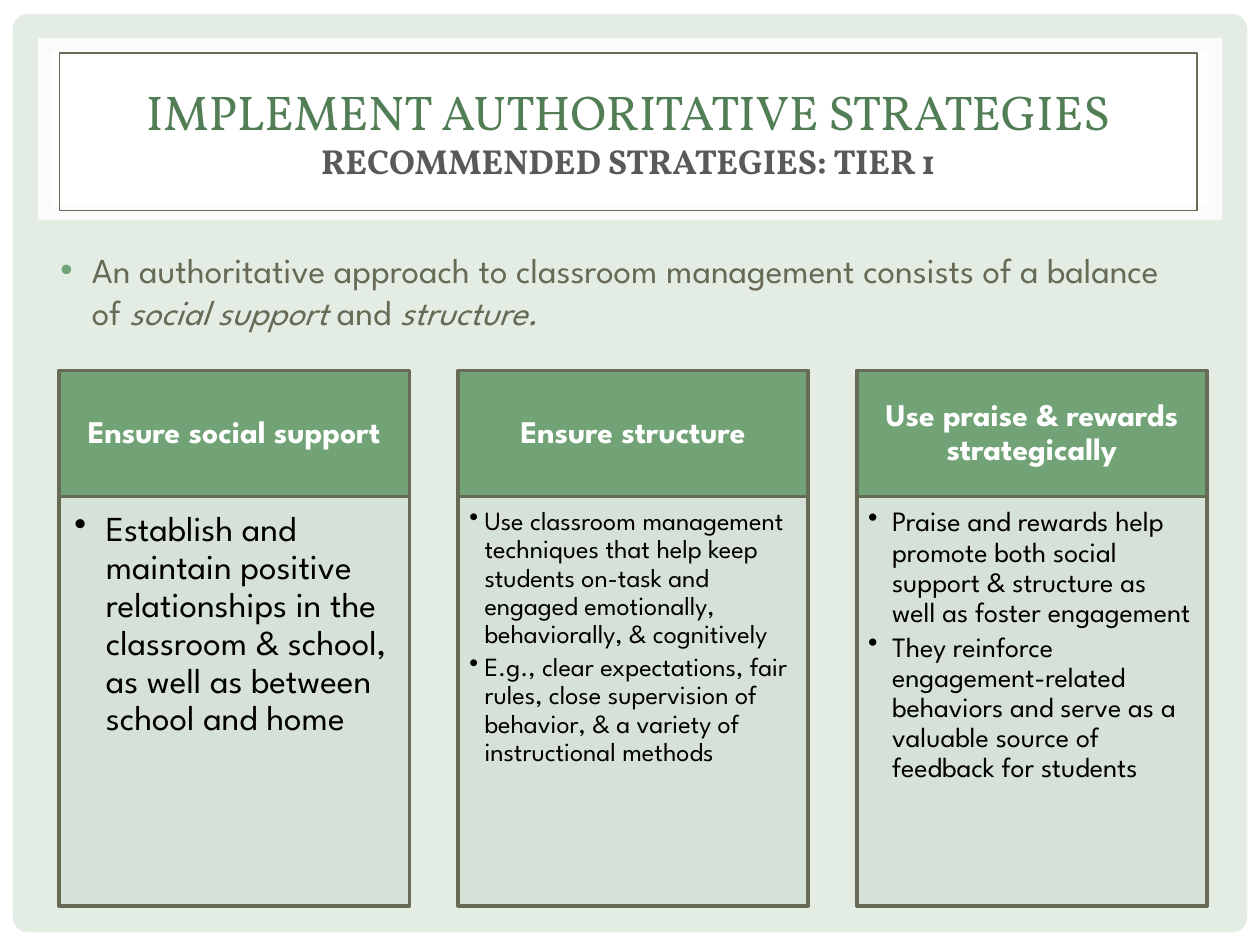
from pptx import Presentation
from pptx.dml.color import RGBColor
from pptx.enum.shapes import MSO_SHAPE as Preset
from pptx.enum.text import MSO_ANCHOR as Anchor, MSO_AUTO_SIZE as AutoSize, PP_ALIGN as Align
from pptx.oxml.ns import qn
from pptx.util import Inches, Pt
from lxml.etree import SubElement

WHITE = RGBColor(0xFF, 0xFF, 0xFF)
BLACK = RGBColor(0, 0, 0)
MINT = RGBColor(0xE3, 0xED, 0xE4)
SAGE = RGBColor(0xD5, 0xE0, 0xD6)
GREEN = RGBColor(0x72, 0xA3, 0x76)
DARK_GREEN = RGBColor(0x52, 0x7E, 0x56)
OLIVE = RGBColor(0x67, 0x6A, 0x55)
GRAY = RGBColor(0x59, 0x59, 0x59)

BODY_FONT = "League Spartan"
TITLE_FONT = "Vollkorn"

COLUMN_LEFT = 0.47
COLUMN_STEP = 3.165
COLUMN_WIDTH = 2.78
HEADER_TOP = 2.94
HEADER_HEIGHT = 1
DETAIL_HEIGHT = 3.25

COLUMNS = [
    ("Ensure social support", 20, 0.25, (0.12, 0.12, 0.16, 0.17), [
        "Establish and maintain positive relationships in the classroom & school, "
        "as well as between school and home",
    ]),
    ("Ensure structure", 15, 0.12, (0.09, 0.09, 0.12, 0.13), [
        "Use classroom management techniques that help keep students on-task and "
        "engaged emotionally, behaviorally, & cognitively",
        "E.g., clear expectations, fair rules, close supervision of behavior, "
        "& a variety of instructional methods",
    ]),
    ("Use praise & rewards strategically", 16, 0.19, (0.09, 0.09, 0.12, 0.14), [
        "Praise and rewards help promote both social support & structure as well "
        "as foster engagement",
        "They reinforce engagement-related behaviors and serve as a valuable "
        "source of feedback for students",
    ]),
]


def add_text(paragraph, text, size, color, font=BODY_FONT, bold=False, italic=False):
    run = paragraph.add_run()
    run.text = text
    run.font.name = font
    run.font.size = Pt(size)
    run.font.color.rgb = color
    run.font.bold = bold
    run.font.italic = italic


def set_bullet(paragraph, margin, hanging, color=None):
    properties = paragraph._p.get_or_add_pPr()
    properties.set("marL", str(Inches(margin)))
    properties.set("indent", str(-Inches(hanging)))
    if color is not None:
        bullet_color = SubElement(properties, qn("a:buClr"))
        SubElement(bullet_color, qn("a:srgbClr")).set("val", str(color))
    SubElement(properties, qn("a:buChar")).set("char", "•")


def add_box(slide, left, top, width, height, fill, preset=Preset.RECTANGLE,
            opacity=100, line_color=None):
    shape = slide.shapes.add_shape(
        preset, Inches(left), Inches(top), Inches(width), Inches(height))
    shape.shadow.inherit = False
    shape.fill.solid()
    shape.fill.fore_color.rgb = fill
    if opacity < 100:
        color = shape.element.spPr.find(qn("a:solidFill"))[0]
        SubElement(color, qn("a:alpha")).set("val", str(opacity * 1000))
    if line_color is None:
        shape.line.fill.background()
    else:
        shape.line.color.rgb = line_color
        shape.line.width = Pt(2)
    return shape


def set_frame(shape, anchor, insets):
    frame = shape.text_frame
    frame.word_wrap = True
    frame.auto_size = AutoSize.NONE
    frame.vertical_anchor = anchor
    (frame.margin_left, frame.margin_top,
     frame.margin_right, frame.margin_bottom) = map(Inches, insets)
    return frame


def place(shape, left, top, width, height):
    shape.left, shape.top = Inches(left), Inches(top)
    shape.width, shape.height = Inches(width), Inches(height)


def add_backdrop(slide):
    add_box(slide, 0, 0, 10, 7.5, WHITE)
    card = add_box(slide, 0.1, 0.11, 9.8, 7.29, MINT, preset=Preset.ROUNDED_RECTANGLE)
    card.adjustments[0] = 0.017
    add_box(slide, 0.3, 0.3, 9.4, 1.45, WHITE, opacity=83)
    add_box(slide, 0.41, 0.41, 9.17, 1.22, WHITE)


def bring_to_front(slide, shape):
    slide.shapes.element.append(shape.element)


def fill_title(title):
    place(title, 0.47, 0.42, 9.03, 1.25)
    title.line.color.rgb = OLIVE
    title.line.width = Pt(0.75)
    frame = set_frame(title, Anchor.MIDDLE, (0.1, 0.05, 0.1, 0.05))
    paragraph = frame.paragraphs[0]
    paragraph.alignment = Align.CENTER
    add_text(paragraph, "IMPLEMENT AUTHORITATIVE STRATEGIES", 27.9, DARK_GREEN, font=TITLE_FONT)
    paragraph.add_line_break()
    add_text(paragraph, "RECOMMENDED STRATEGIES: TIER 1", 19.8, GRAY, font=TITLE_FONT, bold=True)


def fill_body(body):
    place(body, 0.25, 1.92, 9.33, 5.33)
    frame = set_frame(body, Anchor.TOP, (0.1, 0.05, 0.1, 0.05))
    paragraph = frame.paragraphs[0]
    paragraph.space_before = Pt(4)
    set_bullet(paragraph, 0.38, 0.25, color=GREEN)
    for text, italic in [
        ("An authoritative approach to classroom management consists of a balance of ", False),
        ("social support ", True),
        ("and ", False),
        ("structure.", True),
    ]:
        add_text(paragraph, text, 20, OLIVE, italic=italic)


def add_column(slide, left, heading, size, indent, insets, points):
    header = add_box(slide, left, HEADER_TOP, COLUMN_WIDTH, HEADER_HEIGHT,
                     GREEN, line_color=OLIVE)
    paragraph = set_frame(header, Anchor.MIDDLE, (0.14, 0.08, 0.14, 0.08)).paragraphs[0]
    paragraph.alignment = Align.CENTER
    paragraph.line_spacing = 0.9
    add_text(paragraph, heading, 18, WHITE, bold=True)

    detail = add_box(slide, left, HEADER_TOP + HEADER_HEIGHT, COLUMN_WIDTH, DETAIL_HEIGHT,
                     SAGE, opacity=90, line_color=OLIVE)
    frame = set_frame(detail, Anchor.TOP, insets)
    for index, point in enumerate(points):
        paragraph = frame.add_paragraph() if index else frame.paragraphs[0]
        paragraph.alignment = Align.LEFT
        paragraph.line_spacing = 0.9
        paragraph.space_after = Pt(size * 0.15)
        set_bullet(paragraph, indent, indent)
        add_text(paragraph, point, size, BLACK)


def main():
    presentation = Presentation()
    presentation.slide_width = Inches(10)
    presentation.slide_height = Inches(7.5)
    slide = presentation.slides.add_slide(presentation.slide_layouts[1])
    slide.background.fill.solid()
    slide.background.fill.fore_color.rgb = MINT
    title, body = slide.shapes.title, slide.placeholders[1]
    add_backdrop(slide)
    for placeholder in (body, title):
        bring_to_front(slide, placeholder)
    fill_body(body)
    fill_title(title)
    for index, column in enumerate(COLUMNS):
        add_column(slide, COLUMN_LEFT + index * COLUMN_STEP, *column)
    presentation.save("out.pptx")


if __name__ == "__main__":
    main()
